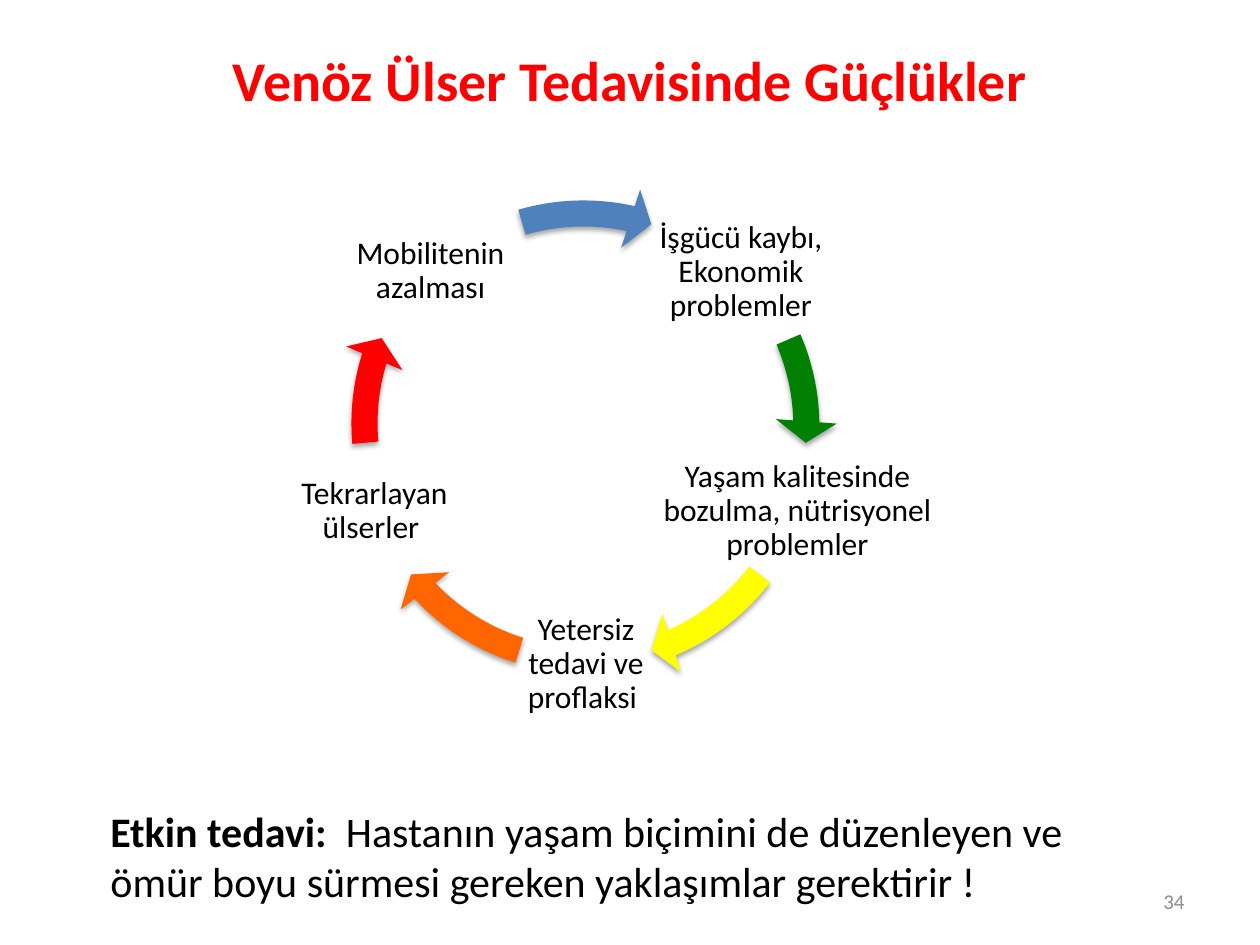
from lxml import etree
from pptx import Presentation
from pptx import util as u
from pptx.dml.color import RGBColor
from pptx.enum import shapes, text
from pptx.oxml import ns

PIXEL = u.Inches(1) / 126
FONT = "Calibri"
BLACK = RGBColor(0x00, 0x00, 0x00)
GRAY = RGBColor(0x8C, 0x8C, 0x8C)
RED = RGBColor(0xFF, 0x00, 0x00)
GREEN = RGBColor(0x00, 0x80, 0x00)
YELLOW = RGBColor(0xFF, 0xFF, 0x00)
ORANGE = RGBColor(0xFF, 0x66, 0x00)
BLUE = RGBColor(0x4F, 0x81, 0xBD)

TITLE = "Venöz Ülser Tedavisinde Güçlükler"
TITLE_BOX = (63, 0, 1134, 158)
NOTE = [("Etkin tedavi:  ", True),
        ("Hastanın yaşam biçimini de düzenleyen ve ömür boyu sürmesi "
         "gereken yaklaşımlar gerektirir !", False)]
NOTE_BOX = (98, 799, 1047, 115)
NUMBER = "34"
NUMBER_BOX = (903, 876, 294, 50)

LABEL_HEIGHT = 134
ARROW_SIZE = 501
ARROW_WIDTH, HEAD_ANGLE, HEAD_WIDTH = 0.052, 3.357, 0.061
# label, (left, top, width), arrow colour, arrow (left, top), (end, start) angles
STEPS = [
    ("İşgücü kaybı, Ekonomik problemler", (653, 205, 176),
     GREEN, (336, 176), (215.2, 202.02)),
    ("Yaşam kalitesinde bozulma, nütrisyonel problemler", (636, 444, 323),
     YELLOW, (335, 190), (40.16, 22.53)),
    ("Yetersiz tedavi ve proflaksi ", (519, 597, 134),
     ORANGE, (335, 190), (82.12, 64.49)),
    ("Tekrarlayan ülserler ", (284, 444, 181),
     RED, (334, 173), (118.33, 104.98)),
    ("Mobilitenin azalması", (340, 204, 181),
     BLUE, (333, 183), (169.44, 152.26)),
]


def emu(*pixels):
    """Turn pixel lengths into EMU."""
    return [u.Emu(round(value * PIXEL)) for value in pixels]


def write(frame, runs, size, color, align, anchor):
    """Fill a text frame with one paragraph of (text, bold) runs."""
    frame.word_wrap = True
    frame.vertical_anchor = anchor
    paragraph = frame.paragraphs[0]
    paragraph.alignment = align
    for words, bold in runs:
        run = paragraph.add_run()
        run.text = words
        run.font.name = FONT
        run.font.size = u.Pt(size)
        run.font.bold = bold
        run.font.color.rgb = color
    return paragraph


def add_text(slide, box, runs, size, color=BLACK, align=text.PP_ALIGN.LEFT,
             anchor=text.MSO_ANCHOR.MIDDLE):
    """Add a text box and return its frame."""
    frame = slide.shapes.add_textbox(*emu(*box)).text_frame
    write(frame, runs, size, color, align, anchor)
    return frame


def add_label(slide, words, place):
    """Add the centred label of one step."""
    frame = add_text(slide, (*place, LABEL_HEIGHT), [(words, False)], 18,
                     align=text.PP_ALIGN.CENTER)
    frame.margin_left = frame.margin_right = u.Inches(0.03)
    frame.margin_top = frame.margin_bottom = u.Inches(0.03)
    frame.paragraphs[0].line_spacing = 0.9


def add_shadow(shape):
    """Give a shape a soft shadow that falls straight down."""
    shape.shadow.inherit = False
    effects = shape._element.spPr.find(ns.qn("a:effectLst"))
    shadow = etree.SubElement(
        effects, ns.qn("a:outerShdw"), blurRad=str(u.Pt(3.1)),
        dist=str(u.Pt(1.8)), dir="5400000", rotWithShape="0")
    color = etree.SubElement(shadow, ns.qn("a:srgbClr"), val=str(BLACK))
    etree.SubElement(color, ns.qn("a:alpha"), val="35000")


def add_arrow(slide, color, place, angles):
    """Add the curved arrow that leads to the next step."""
    arrow = slide.shapes.add_shape(
        shapes.MSO_SHAPE.CIRCULAR_ARROW, *emu(*place, ARROW_SIZE, ARROW_SIZE))
    values = (ARROW_WIDTH, HEAD_ANGLE, *angles, HEAD_WIDTH)
    for index, value in enumerate(values):
        arrow.adjustments[index] = value
    arrow.fill.solid()
    arrow.fill.fore_color.rgb = color
    arrow.line.fill.background()
    add_shadow(arrow)


def main():
    """Build the slide and save it."""
    presentation = Presentation()
    presentation.slide_width = u.Inches(10)
    presentation.slide_height = u.Inches(7.5)
    slide = presentation.slides.add_slide(presentation.slide_layouts[5])

    title = slide.shapes.title
    title.left, title.top, title.width, title.height = emu(*TITLE_BOX)
    write(title.text_frame, [(TITLE, True)], 32, RED,
          text.PP_ALIGN.CENTER, text.MSO_ANCHOR.MIDDLE)

    for words, label_place, color, arrow_place, angles in STEPS:
        add_label(slide, words, label_place)
        add_arrow(slide, color, arrow_place, angles)

    add_text(slide, NOTE_BOX, NOTE, 24, anchor=text.MSO_ANCHOR.TOP)
    add_text(slide, NUMBER_BOX, [(NUMBER, False)], 12, GRAY,
             text.PP_ALIGN.RIGHT)
    presentation.save("out.pptx")


main()
